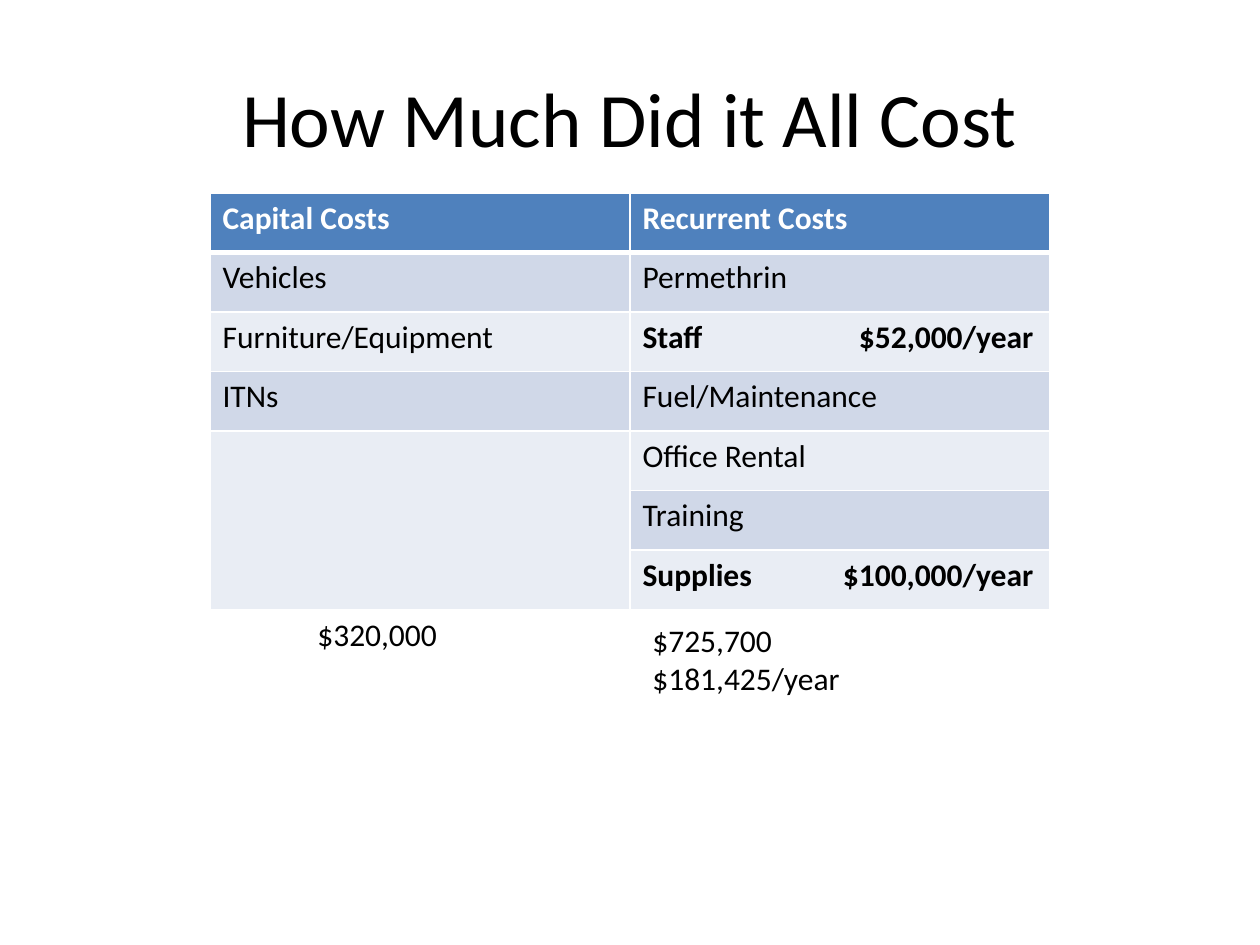
"""Build the cost summary slide with its table of capital and recurrent costs."""
import lxml.etree
import pptx
import pptx.dml.color
import pptx.enum.text
import pptx.oxml.ns
import pptx.util

PX = 914400 / 126
COLORS = {
    "white": "FFFFFF",
    "black": "000000",
    "header": "4F81BD",
    "odd": "D0D8E8",
    "even": "E9EDF4",
}
qualified = pptx.oxml.ns.qn


def write_text(frame, text, size=18, color="black", bold=False, align="LEFT", tab=None):
    for index, line in enumerate(text.split("\n")):
        paragraph = frame.add_paragraph() if index else frame.paragraphs[0]
        paragraph.alignment = getattr(pptx.enum.text.PP_ALIGN, align)
        run = paragraph.add_run()
        run.text = line
        run.font.name = "Calibri"
        run.font.size = pptx.util.Pt(size)
        run.font.bold = bold
        run.font.color.rgb = pptx.dml.color.RGBColor.from_string(COLORS[color])
        if tab:
            properties = paragraph._p.get_or_add_pPr()
            stops = lxml.etree.SubElement(properties, qualified("a:tabLst"))
            lxml.etree.SubElement(
                stops, qualified("a:tab"), pos=str(int(tab * PX)), algn="r"
            )


def add_border(cell, side, points):
    properties = cell._tc.get_or_add_tcPr()
    line = lxml.etree.SubElement(
        properties, qualified(f"a:ln{side}"), w=str(pptx.util.Pt(points))
    )
    fill = lxml.etree.SubElement(line, qualified("a:solidFill"))
    lxml.etree.SubElement(fill, qualified("a:srgbClr"), val=COLORS["white"])


presentation = pptx.Presentation()
presentation.slide_width = int(1260 * PX)
presentation.slide_height = int(945 * PX)
slide = presentation.slides.add_slide(presentation.slide_layouts[5])

title = slide.shapes.title
title.left, title.top, title.width, title.height = (
    int(length * PX) for length in (63, 38, 1134, 157)
)
title.text_frame.vertical_anchor = pptx.enum.text.MSO_ANCHOR.MIDDLE
write_text(title.text_frame, "How Much Did it All Cost", size=44, align="CENTER")

cost_rows = [
    ("Capital Costs", "Recurrent Costs"),
    ("Vehicles", "Permethrin"),
    ("Furniture/Equipment", "Staff\t$52,000/year"),
    ("ITNs", "Fuel/Maintenance"),
    ("", "Office Rental"),
    ("", "Training"),
    ("", "Supplies\t$100,000/year"),
]
cost_table = slide.shapes.add_table(
    len(cost_rows), 2, *(int(length * PX) for length in (210, 193, 840, 417))
).table

for row_index, labels in enumerate(cost_rows):
    is_header = row_index == 0
    band = "header" if is_header else "odd" if row_index % 2 else "even"
    for column_index, label in enumerate(labels):
        cell = cost_table.cell(row_index, column_index)
        add_border(cell, "L", 1)
        add_border(cell, "R", 1)
        add_border(cell, "T", 3 if row_index == 1 else 1)
        add_border(cell, "B", 3 if is_header else 1)
        cell.fill.solid()
        cell.fill.fore_color.rgb = pptx.dml.color.RGBColor.from_string(COLORS[band])
        if label:
            has_amount = "\t" in label
            write_text(
                cell.text_frame,
                label,
                color="white" if is_header else "black",
                bold=is_header or has_amount,
                tab=391 if has_amount else None,
            )
cost_table.cell(4, 0).merge(cost_table.cell(6, 0))

totals = [
    ("$320,000", (305, 609, 146, 50), False),
    ("$725,700\n$181,425/year", (640, 615, 410, 89), True),
]
for text, box, wraps in totals:
    total = slide.shapes.add_textbox(*(int(length * PX) for length in box))
    total.text_frame.word_wrap = wraps
    total.text_frame.auto_size = pptx.enum.text.MSO_AUTO_SIZE.SHAPE_TO_FIT_TEXT
    write_text(total.text_frame, text)

presentation.save("out.pptx")
